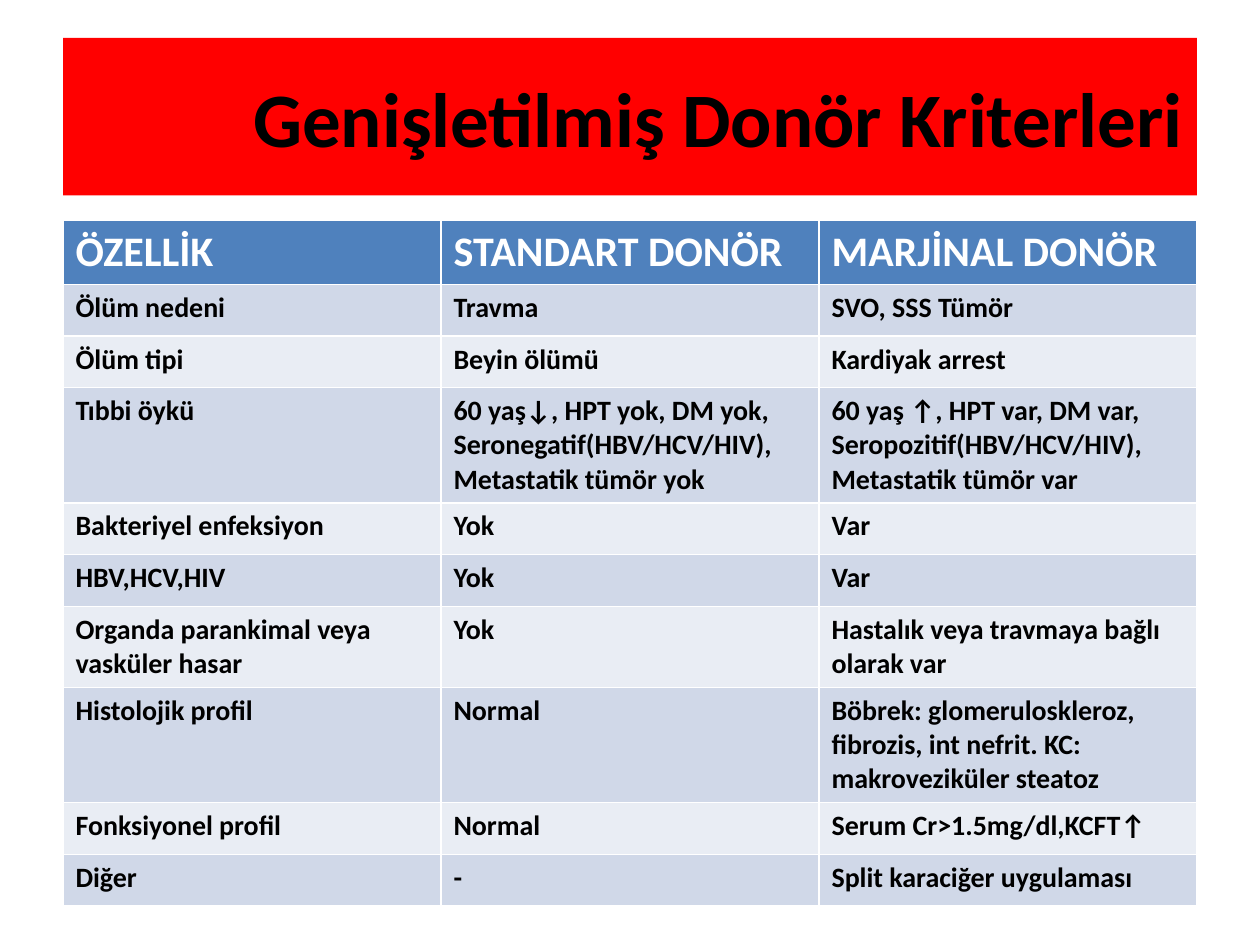
from pptx import Presentation
from pptx.dml.color import RGBColor
from pptx.enum import text
from pptx.util import Inches, Pt

TITLE = "Genişletilmiş Donör Kriterleri"
ROWS = [
    ("ÖZELLİK", "STANDART DONÖR", "MARJİNAL DONÖR"),
    ("Ölüm nedeni", "Travma", "SVO, SSS Tümör"),
    ("Ölüm tipi", "Beyin ölümü", "Kardiyak arrest"),
    ("Tıbbi öykü",
     "60 yaş↓, HPT yok, DM yok, Seronegatif(HBV/HCV/HIV), Metastatik tümör yok",
     "60 yaş ↑, HPT var, DM var, Seropozitif(HBV/HCV/HIV), Metastatik tümör var"),
    ("Bakteriyel enfeksiyon", "Yok", "Var"),
    ("HBV,HCV,HIV", "Yok", "Var"),
    ("Organda parankimal veya vasküler hasar", "Yok",
     "Hastalık veya travmaya bağlı olarak var"),
    ("Histolojik profil", "Normal",
     "Böbrek: glomeruloskleroz, fibrozis, int nefrit. KC: makroveziküler steatoz"),
    ("Fonksiyonel profil", "Normal", "Serum Cr>1.5mg/dl,KCFT↑"),
    ("Diğer", "-", "Split karaciğer uygulaması"),
]
HEAD = "4F81BD"
BANDS = ("E9EDF4", "D0D8E8")
LEFT, WIDTH, ROW = 0.5, 9, 0.41


def paint(fill, color):
    fill.solid()
    fill.fore_color.rgb = RGBColor.from_string(color)


def style(para, size, color):
    font = para.font
    font.name, font.size, font.bold = "Calibri", Pt(size), True
    font.color.rgb = RGBColor.from_string(color)


def add_title(slide):
    title = slide.shapes.title
    title.left, title.top = Inches(LEFT), Inches(0.3)
    title.width, title.height = Inches(WIDTH), Inches(1.25)
    paint(title.fill, "FF0000")
    frame = title.text_frame
    frame.text = TITLE
    frame.vertical_anchor = text.MSO_ANCHOR.MIDDLE
    para = frame.paragraphs[0]
    para.alignment = text.PP_ALIGN.RIGHT
    style(para, 44, "000000")


def add_grid(slide):
    table = slide.shapes.add_table(
        len(ROWS), len(ROWS[0]), Inches(LEFT), Inches(1.75),
        Inches(WIDTH), Inches(ROW * len(ROWS))).table
    for r, row in enumerate(ROWS):
        for c, words in enumerate(row):
            cell = table.cell(r, c)
            cell.text = words
            paint(cell.fill, BANDS[r % 2] if r else HEAD)
            size, color = (16, "000000") if r else (24, "FFFFFF")
            style(cell.text_frame.paragraphs[0], size, color)


def main():
    deck = Presentation()
    deck.slide_width, deck.slide_height = Inches(10), Inches(7.5)
    slide = deck.slides.add_slide(deck.slide_layouts[5])
    add_title(slide)
    add_grid(slide)
    deck.save("out.pptx")


if __name__ == "__main__":
    main()
